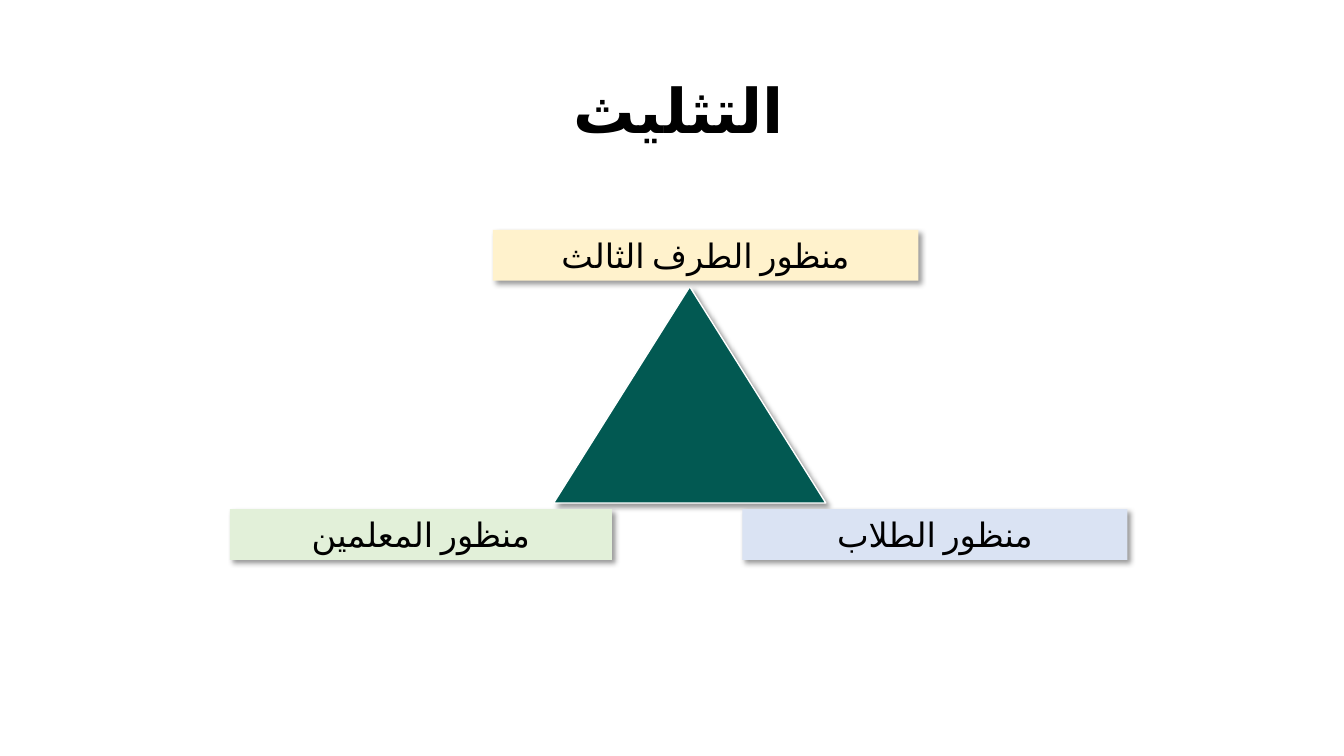
"""Builds a slide showing triangulation between three perspectives."""
from lxml import etree
from pptx import Presentation
from pptx.dml.color import RGBColor
from pptx.enum.lang import MSO_LANGUAGE_ID
from pptx.enum.shapes import MSO_SHAPE
from pptx.enum.text import MSO_ANCHOR, MSO_AUTO_SIZE, PP_ALIGN
from pptx.oxml.ns import qn
from pptx.util import Pt

TRIANGLE, RECTANGLE = MSO_SHAPE.ISOSCELES_TRIANGLE, MSO_SHAPE.RECTANGLE
TOP, MIDDLE = MSO_ANCHOR.TOP, MSO_ANCHOR.MIDDLE
FIT_SHAPE, NO_FIT = MSO_AUTO_SIZE.SHAPE_TO_FIT_TEXT, MSO_AUTO_SIZE.NONE
CENTER = PP_ALIGN.CENTER
ARABIC = MSO_LANGUAGE_ID.ARABIC
TITLE_ONLY = 5

FONT = "Calibri"
COLORS = {"text": "000000", "outline": "FFFFFF", "triangle": "025952",
          "teachers": "E2F0D9", "students": "DAE3F3", "third": "FFF2CC"}

TITLE = "التثليث "
TITLE_AREA = (66, 28.8, 828, 104.4)
TRIANGLE_AREA = (395.5, 204.8, 194.4, 154.5)
LABEL_HEIGHT = 36.35
LABEL_GAP = 4.3
PERSPECTIVES = [
    ("منظور المعلمين", "teachers", 164.2, 272.9, "below"),
    ("منظور الطلاب", "students", 530.3, 275, "below"),
    ("منظور الطرف الثالث", "third", 352.1, 303.9, "above"),
]


def color(name):
    return RGBColor.from_string(COLORS[name])


def write(box, text, size, bold=False):
    para = box.text_frame.paragraphs[0]
    para.alignment = CENTER
    para._p.get_or_add_pPr().set("rtl", "1")
    font = para.font
    font.name, font.size, font.bold = FONT, Pt(size), bold
    font.color.rgb = color("text")
    span = para.add_run()
    span.text = text
    span.font.language_id = ARABIC
    etree.SubElement(span._r.get_or_add_rPr(), qn("a:cs"), typeface=FONT)
    return para


def add_shadow(shape):
    effects = etree.SubElement(shape._element.spPr, qn("a:effectLst"))
    shadow = etree.SubElement(
        effects, qn("a:outerShdw"), blurRad=str(Pt(4)), dist=str(Pt(3)),
        dir=str(45 * 60000), algn="tl", rotWithShape="0")
    tint = etree.SubElement(shadow, qn("a:srgbClr"), val=COLORS["text"])
    etree.SubElement(tint, qn("a:alpha"), val="40000")


def add_part(group, kind, area, fill, outline=None):
    shape = group.shapes.add_shape(kind, *map(Pt, area))
    shape.fill.solid()
    shape.fill.fore_color.rgb = color(fill)
    if outline:
        shape.line.color.rgb = color(outline)
        shape.line.width = Pt(1)
    else:
        shape.line.fill.background()
    add_shadow(shape)
    return shape


def main():
    deck = Presentation()
    deck.slide_width, deck.slide_height = Pt(960), Pt(540)
    page = deck.slides.add_slide(deck.slide_layouts[TITLE_ONLY])

    title = page.shapes.title
    title.left, title.top, title.width, title.height = map(Pt, TITLE_AREA)
    title.text_frame.vertical_anchor = MIDDLE
    title.text_frame.auto_size = NO_FIT
    write(title, TITLE, 44, bold=True).line_spacing = 0.9

    diagram = page.shapes.add_group_shape()
    add_part(diagram, TRIANGLE, TRIANGLE_AREA, "triangle", "outline")
    apex, base = TRIANGLE_AREA[1], TRIANGLE_AREA[1] + TRIANGLE_AREA[3]
    tops = {"above": apex - LABEL_GAP - LABEL_HEIGHT, "below": base + LABEL_GAP}
    for text, fill, left, width, side in PERSPECTIVES:
        label = add_part(diagram, RECTANGLE,
                         (left, tops[side], width, LABEL_HEIGHT), fill)
        frame = label.text_frame
        frame.word_wrap = True
        frame.auto_size = FIT_SHAPE
        frame.vertical_anchor = TOP
        write(label, text, 24)

    deck.save("out.pptx")


if __name__ == "__main__":
    main()
